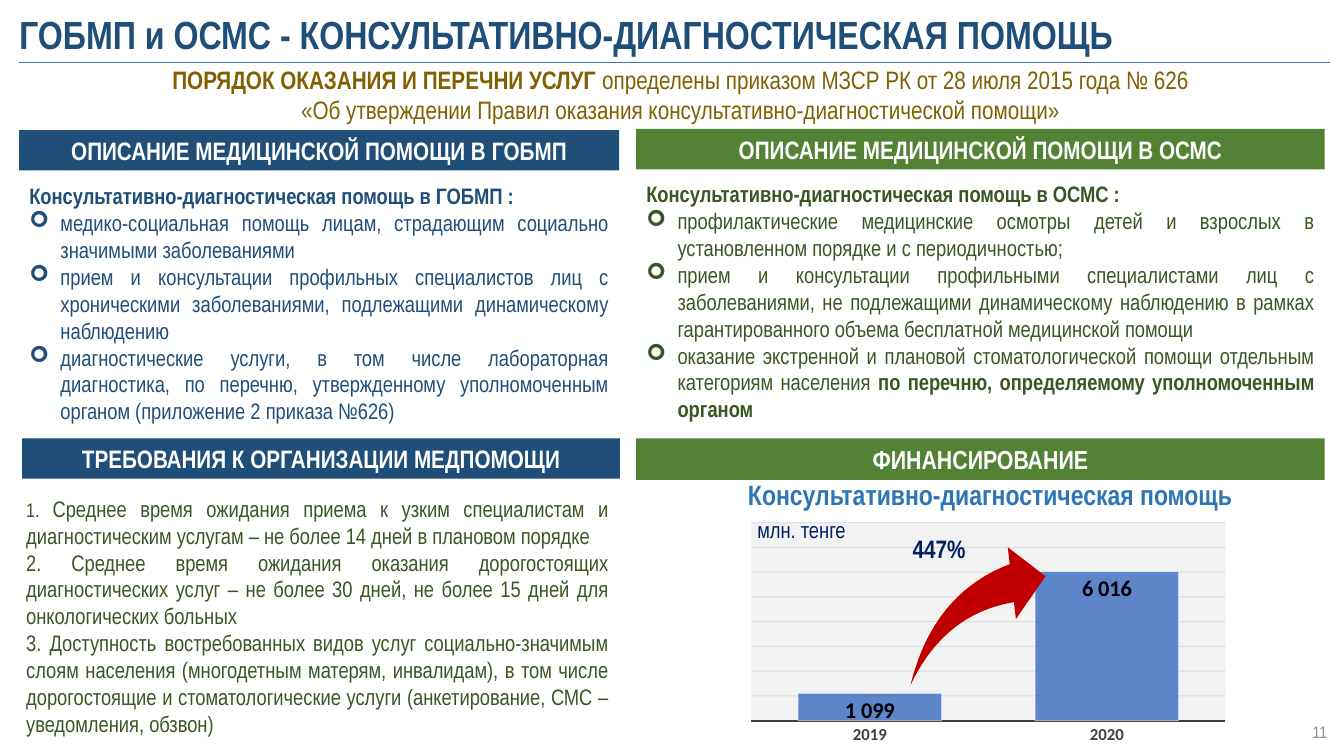
import pptx
import pptx.util
import pptx.chart.data
import pptx.dml.color
import pptx.enum.chart
import pptx.enum.shapes
import pptx.enum.text
import pptx.oxml
import pptx.oxml.ns

Inches = pptx.util.Inches
Pt = pptx.util.Pt
Align = pptx.enum.text.PP_ALIGN
Anchor = pptx.enum.text.MSO_ANCHOR
Shape = pptx.enum.shapes.MSO_SHAPE
qn = pptx.oxml.ns.qn

FONT = "Arial Narrow"
NAVY, GREEN, DARK, GOLD = "1F4E79", "548235", "385723", "806000"
LEFT, RIGHT = (0.19, 5.95), (6.31, 6.83)

CARE = [
    [("Консультативно-диагностическая помощь в ГОБМП :", True)],
    [("медико-социальная помощь лицам, страдающим социально значимыми заболеваниями", False)],
    [("прием и консультации профильных специалистов лиц с хроническими заболеваниями, "
      "подлежащими динамическому наблюдению", False)],
    [("диагностические услуги, в том числе лабораторная диагностика, по перечню, "
      "утвержденному уполномоченным органом (приложение 2 приказа №626)", False)],
]
COVER = [
    [("Консультативно-диагностическая помощь в ОСМС :", True)],
    [("профилактические медицинские осмотры детей и взрослых в установленном порядке "
      "и с периодичностью;", False)],
    [("прием и консультации профильными специалистами лиц с заболеваниями, не подлежащими "
      "динамическому наблюдению в рамках гарантированного объема бесплатной медицинской помощи", False)],
    [("оказание экстренной и плановой стоматологической помощи отдельным категориям населения ", False),
     ("по перечню, определяемому уполномоченным органом", True)],
]
NEEDS = [
    [("1. ", False),
     ("Среднее время ожидания приема к узким специалистам и диагностическим услугам – "
      "не более 14 дней в плановом порядке", False)],
    [("2. Среднее время ожидания оказания дорогостоящих диагностических услуг – "
      "не более 30 дней, не более 15 дней для онкологических больных", False)],
    [("3. Доступность востребованных видов услуг социально-значимым слоям населения "
      "(многодетным матерям, инвалидам), в том числе дорогостоящие и стоматологические услуги "
      "(анкетирование, СМС – уведомления, обзвон)", False)],
]
ORDER = [
    [("ПОРЯДОК ОКАЗАНИЯ И ПЕРЕЧНИ УСЛУГ ", True),
     ("определены приказом МЗСР РК от 28 июля 2015 года № 626", False)],
    [("«Об утверждении Правил оказания консультативно-диагностической помощи»", False)],
]


def color(code):
    return pptx.dml.color.RGBColor.from_string(code)


def style(font, size, code, bold=False, name=FONT):
    font.name, font.size, font.bold = name, Pt(size), bold
    font.color.rgb = color(code)


def place(shape, left, top, width, height):
    shape.left, shape.top = Inches(left), Inches(top)
    shape.width, shape.height = Inches(width), Inches(height)


def write(shape, text, size, code, bold=False, align=Align.LEFT, anchor=Anchor.MIDDLE):
    frame = shape.text_frame
    frame.text = text
    frame.auto_size = pptx.enum.text.MSO_AUTO_SIZE.NONE
    frame.vertical_anchor = anchor
    para = frame.paragraphs[0]
    para.alignment = align
    for run in para.runs:
        style(run.font, size, code, bold)
    return para


def label(slide, box, text, size, code, bold=False, align=Align.CENTER, wrap=True):
    shape = slide.shapes.add_textbox(*map(Inches, box))
    shape.text_frame.word_wrap = wrap
    write(shape, text, size, code, bold, align)


def banner(slide, box, text, code, size=18):
    shape = slide.shapes.add_shape(Shape.RECTANGLE, *map(Inches, box))
    shape.shadow.inherit = False
    shape.fill.solid()
    shape.fill.fore_color.rgb = color(code)
    shape.line.fill.background()
    write(shape, text, size, "FFFFFF", True, Align.CENTER)


def bullet(para, sign):
    props = para._p.get_or_add_pPr()
    props.set("marL", str(Inches(0.31) if sign else 0))
    props.set("indent", str(-Inches(0.31) if sign else 0))
    if sign:
        props.insert_element_before(pptx.oxml.parse_xml(
            '<a:buFont %s typeface="Wingdings"/>' % pptx.oxml.ns.nsdecls("a")), "a:tabLst", "a:defRPr", "a:extLst")
        mark = '<a:buChar %s char="➢"/>'
    else:
        mark = "<a:buNone %s/>"
    props.insert_element_before(pptx.oxml.parse_xml(
        mark % pptx.oxml.ns.nsdecls("a")), "a:tabLst", "a:defRPr", "a:extLst")


def body(shape, box, rows, size, code, align=Align.JUSTIFY, marks=False):
    place(shape, *box)
    frame = shape.text_frame
    frame.auto_size = pptx.enum.text.MSO_AUTO_SIZE.NONE
    frame.vertical_anchor = Anchor.TOP
    for pos, row in enumerate(rows):
        para = frame.paragraphs[0] if pos == 0 else frame.add_paragraph()
        para.alignment = align
        para.space_before = Pt(0)
        bullet(para, marks and pos > 0)
        for text, bold in row:
            run = para.add_run()
            run.text = text
            style(run.font, size, code, bold)


def fade(fill, share):
    node = fill._xPr.find(qn("a:solidFill"))[0]
    alpha = node.makeelement(qn("a:alpha"), {"val": str(share * 1000)})
    node.append(alpha)


def columns(slide, box):
    data = pptx.chart.data.CategoryChartData()
    data.categories = ["2019", "2020"]
    data.add_series("млн. тенге", (1099, 6016))
    kind = pptx.enum.chart.XL_CHART_TYPE.COLUMN_CLUSTERED
    chart = slide.shapes.add_chart(kind, *map(Inches, box), data).chart
    chart.has_title = chart.has_legend = False
    style(chart.font, 10, "000000", name="Calibri")

    years = chart.category_axis
    years.major_tick_mark = pptx.enum.chart.XL_TICK_MARK.NONE
    years.format.line.color.rgb = color("404040")
    years.format.line.width = Pt(1.5)
    style(years.tick_labels.font, 12, "404040", True, "Calibri")

    scale = chart.value_axis
    scale.visible = False
    scale.minimum_scale, scale.maximum_scale, scale.major_unit = 0, 8000, 1000
    grid = scale.major_gridlines.format.line
    grid.color.rgb = color("0D0D0D")
    grid.width = Pt(0.75)
    fade(grid.fill, 10)

    plot = chart.plots[0]
    plot.gap_width, plot.vary_by_categories = 65, False
    bars = plot.series[0]
    bars.format.fill.solid()
    bars.format.fill.fore_color.rgb = color("4472C4")
    fade(bars.format.fill, 85)
    bars.format.line.color.rgb = color("FFFFFF")
    bars.format.line.width = Pt(0.75)
    fade(bars.format.line.fill, 50)
    tags = bars.data_labels
    tags.show_value = True
    tags.number_format, tags.number_format_is_linked = "#\\ ##0", False
    tags.position = pptx.enum.chart.XL_LABEL_POSITION.INSIDE_END
    style(tags.font, 16, "000000", True, "Calibri")

    area = chart._chartSpace.chart.plotArea
    for old in area.findall(qn("c:layout")):
        area.remove(old)
    sizes = zip("xywh", (0.05, 0.044, 0.933, 0.826))
    area.insert(0, pptx.oxml.parse_xml(
        '<c:layout %s><c:manualLayout><c:layoutTarget val="inner"/>'
        '<c:xMode val="edge"/><c:yMode val="edge"/>%s</c:manualLayout></c:layout>'
        % (pptx.oxml.ns.nsdecls("c"), "".join('<c:%s val="%s"/>' % pair for pair in sizes))))
    area.append(pptx.oxml.parse_xml(
        '<c:spPr %s><a:solidFill><a:srgbClr val="F2F2F2"/></a:solidFill></c:spPr>'
        % pptx.oxml.ns.nsdecls("c", "a")))


def rule(slide):
    line = slide.shapes.add_connector(
        pptx.enum.shapes.MSO_CONNECTOR.STRAIGHT, *map(Inches, (0.19, 0.62, 13.19, 0.62)))
    line.line.color.rgb = color("4472C4")
    line.line.width = Pt(0.5)
    props = line._element.spPr
    props.append(props.makeelement(qn("a:effectLst"), {}))


def swoosh(slide):
    arrow = slide.shapes.add_shape(Shape.SWOOSH_ARROW, *map(Inches, (9.03, 5.43, 1.34, 1.37)))
    arrow.adjustments[0], arrow.adjustments[1] = 0.275, 0.265
    arrow.shadow.inherit = False
    arrow.fill.solid()
    arrow.fill.fore_color.rgb = color("C00000")
    arrow.line.fill.background()


def main():
    deck = pptx.Presentation()
    deck.slide_width, deck.slide_height = Inches(13.33), Inches(7.5)
    slide = deck.slides.add_slide(deck.slide_layouts[4])
    title, order, care, needs, cover = slide.placeholders

    place(title, 0.09, 0.13, 13.15, 0.47)
    head = write(title, "ГОБМП и ОСМС - КОНСУЛЬТАТИВНО-ДИАГНОСТИЧЕСКАЯ ПОМОЩЬ", 28, NAVY, True)
    head.line_spacing = 0.9
    rule(slide)
    body(order, (0.25, 0.59, 13, 0.71), ORDER, 18, GOLD, Align.CENTER)

    for (left, width), top, height, text, code, size in (
            (LEFT, 1.29, 0.4, "ОПИСАНИЕ МЕДИЦИНСКОЙ ПОМОЩИ В ГОБМП", NAVY, 18),
            (RIGHT, 1.28, 0.4, "ОПИСАНИЕ МЕДИЦИНСКОЙ ПОМОЩИ В ОСМС", GREEN, 18),
            ((0.22, 5.93), 4.35, 0.4, "ТРЕБОВАНИЯ К ОРГАНИЗАЦИИ МЕДПОМОЩИ", NAVY, 18),
            (RIGHT, 4.35, 0.41, "ФИНАНСИРОВАНИЕ", GREEN, 18.6)):
        banner(slide, (left, top, width, height), text, code, size)

    body(care, (LEFT[0], 1.76, LEFT[1], 2.52), CARE, 16, NAVY, marks=True)
    body(cover, (RIGHT[0], 1.74, RIGHT[1], 2.52), COVER, 16, DARK, marks=True)
    body(needs, (0.16, 4.86, 5.98, 2.52), NEEDS, 16, DARK)
    needs.text_frame.paragraphs[0].runs[0].font.size = Pt(14)

    columns(slide, (7.2, 5.08, 5.04, 2.38))
    swoosh(slide)
    label(slide, (7.32, 4.68, 5.08, 0.44), "Консультативно-диагностическая помощь",
          20, "2E75B6", True, Align.LEFT, False)
    label(slide, (7.1, 5.08, 1.7, 0.35), "млн. тенге", 16, "002060")
    label(slide, (8.78, 5.27, 1.07, 0.35), "447%", 18, "002060", True)
    label(slide, (12.86, 7.06, 0.4, 0.4), "11", 12, "8C8C8C", align=Align.RIGHT)
    deck.save("out.pptx")


if __name__ == "__main__":
    main()
